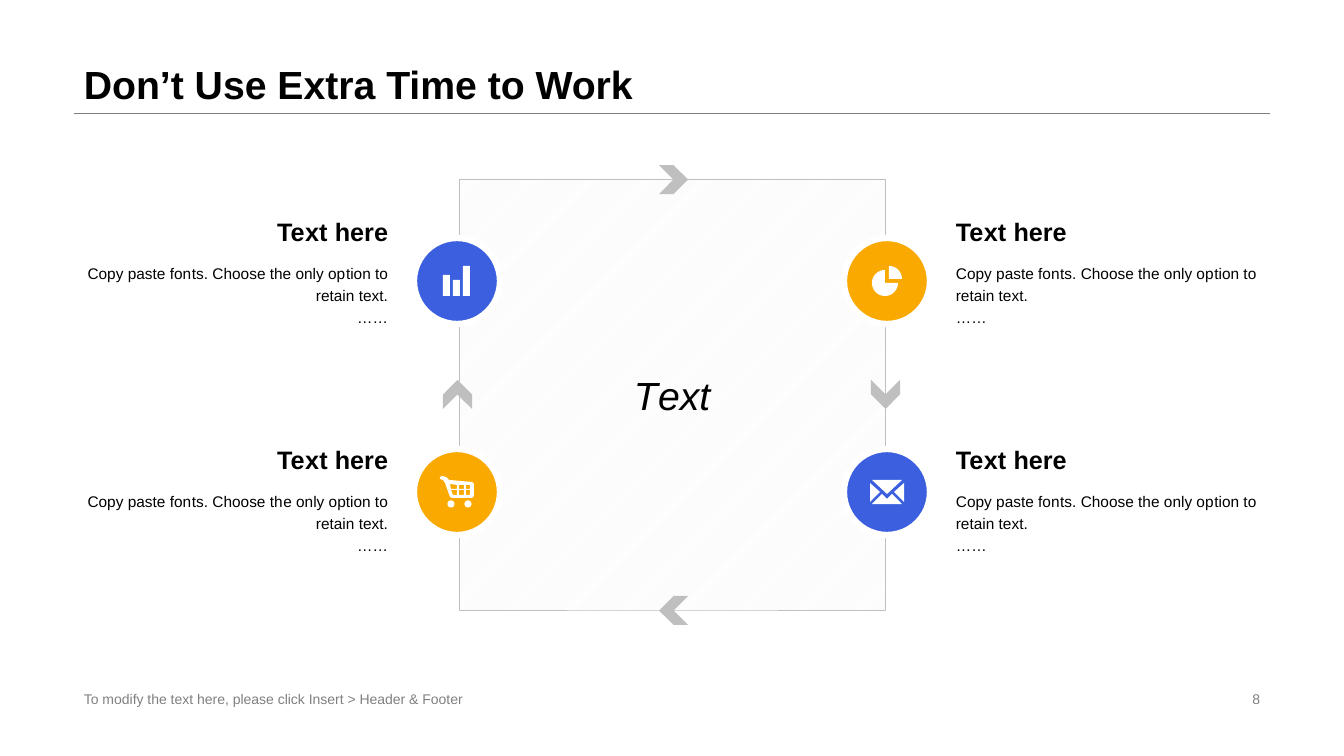
import math

import pptx
import pptx.dml.color
import pptx.enum.dml
import pptx.enum.shapes
import pptx.enum.text
import pptx.oxml.ns
import pptx.util
from lxml import etree

EMU_PER_PX = 914400 / 100.8
SHAPE = pptx.enum.shapes.MSO_SHAPE
ALIGN = pptx.enum.text.PP_ALIGN
ANCHOR = pptx.enum.text.MSO_ANCHOR

BLACK, WHITE, GRAY, SILVER = "000000", "FFFFFF", "808080", "BFBFBF"
BLUE, ORANGE = "3B5FDE", "FAA900"

# A bar in a text marks a hairline gap: a space of one point.
HAIRLINE = "|"
HEADING = "Te|xt |here"
BODY = "Copy paste fon|ts. Choose the only op|tion to retain text."
CART_HEADING = "Te|x|t here"
CART_BODY = "Copy paste fon|ts. Choose th|e only option to retain text."


def px(length):
    return pptx.util.Emu(round(length * EMU_PER_PX))


def set_color(target, value):
    target.rgb = pptx.dml.color.RGBColor.from_string(value)


def style_shape(shape, fill, line=None, width=0):
    shape.shadow.inherit = False
    shape.fill.solid()
    set_color(shape.fill.fore_color, fill)
    if line:
        set_color(shape.line.color, line)
        shape.line.width = pptx.util.Pt(width)
    else:
        shape.line.fill.background()


def add_span(para, text, size, color, bold, italic):
    span = para.add_run()
    span.text = text
    span.font.name = "Arial"
    span.font.size = pptx.util.Pt(size)
    span.font.bold = bold
    span.font.italic = italic
    set_color(span.font.color, color)


def write_text(shape, lines, size, color=BLACK, bold=False, italic=False,
               align=ALIGN.LEFT, anchor=ANCHOR.MIDDLE, spacing=1.0):
    """Fill a shape with one paragraph per line."""
    frame = shape.text_frame
    frame.word_wrap = True
    frame.vertical_anchor = anchor
    for index, line in enumerate(lines):
        para = frame.add_paragraph() if index else frame.paragraphs[0]
        para.alignment = align
        para.line_spacing = spacing
        for position, piece in enumerate(line.split(HAIRLINE)):
            if position:
                add_span(para, " ", 1, color, bold, italic)
            add_span(para, piece, size, color, bold, italic)


def add_text(page, bounds, lines, size, **style):
    box = page.shapes.add_textbox(*map(px, bounds))
    write_text(box, lines, size, **style)


def add_rule(page, left, right, y):
    rule = page.shapes.add_connector(
        pptx.enum.shapes.MSO_CONNECTOR.STRAIGHT, px(left), px(y), px(right), px(y))
    set_color(rule.line.color, GRAY)
    rule.line.width = pptx.util.Pt(0.25)
    properties = rule.element.find(pptx.oxml.ns.qn("p:spPr"))
    etree.SubElement(properties, pptx.oxml.ns.qn("a:effectLst"))


def add_square(page):
    square = page.shapes.add_shape(SHAPE.RECTANGLE, px(459), px(179), px(426), px(431))
    style_shape(square, WHITE, SILVER, 0.25)
    square.fill.patterned()
    square.fill.pattern = pptx.enum.dml.MSO_PATTERN.DARK_UPWARD_DIAGONAL
    set_color(square.fill.fore_color, "F2F2F2")
    set_color(square.fill.back_color, WHITE)
    write_text(square, ["T|ext"], 28, italic=True, align=ALIGN.CENTER)


def add_chevron(page, left, top, rotation):
    chevron = page.shapes.add_shape(SHAPE.CHEVRON, px(left), px(top), px(29), px(29))
    chevron.rotation = rotation
    style_shape(chevron, SILVER)


def arc(x, y, radius, start, sweep):
    """Points along an arc, in degrees clockwise from the right."""
    angles = [math.radians(start + sweep * step / 36) for step in range(37)]
    return [(x + radius * math.cos(a), y + radius * math.sin(a)) for a in angles]


def block(left, top, right, bottom):
    return [(left, top), (right, top), (right, bottom), (left, bottom)]


def add_icon(page, contours):
    """Draw closed contours as one white shape; inner contours become holes."""
    builder = None
    for contour in contours:
        first, *rest = [(px(x), px(y)) for x, y in contour]
        if builder is None:
            builder = page.shapes.build_freeform(*first)
        else:
            builder.move_to(*first)
        builder.add_line_segments(rest, close=True)
    style_shape(builder.convert_to_shape(), WHITE)


def bar_icon():
    return [block(left, top, left + 7, 296)
            for left, top in ((443, 275), (453, 280), (463, 266))]


def pie_icon():
    return [[(889, 279)] + arc(889, 279, 13, -90, 90),
            [(885, 283)] + arc(885, 283, 13, 0, 270)]


def envelope_icon():
    return [
        [(904, 483), (904, 502), (894, 492)],
        [(902, 480), (887, 494), (872, 480)],
        [(902, 504), (872, 504), (882, 494), (887, 499), (892, 494)],
        [(870, 483), (880, 492), (870, 502)],
    ]


def cart_icon():
    body = [(474, 484), (474, 496), (472, 498), (452, 498), (450, 497),
            (445, 483), (443, 480), (440, 479), (440, 477), (442, 476),
            (446, 477), (449, 480), (472, 482)]
    slanted = [[(450, 484), (457, 485), (457, 489), (451, 489)],
               [(451, 490), (457, 490), (457, 495), (453, 495)]]
    windows = [block(left, top, right, bottom)
               for left, right in ((459, 464), (466, 470))
               for top, bottom in ((485, 489), (490, 495))]
    wheels = [arc(x, 504, 7 / 2, 0, 360) for x in (451, 468)]
    return [body, *slanted, *windows, *wheels]


def add_item(page, column, row, color, icon, heading=HEADING, body=BODY):
    """Add one badge with its heading and body text."""
    badge = page.shapes.add_shape(
        SHAPE.OVAL, px((414, 844)[column]), px((238, 449)[row]), px(86), px(86))
    style_shape(badge, color, WHITE, 4.5)
    add_icon(page, icon)
    left, top = (74, 946)[column], 207 + 228 * row
    align = (ALIGN.RIGHT, ALIGN.LEFT)[column]
    add_text(page, (left, top + 48, 324, 100), [body, "……"], 11,
             align=align, anchor=ANCHOR.TOP, spacing=1.2)
    add_text(page, (left, top, 324, 48), [heading], 18, bold=True, align=align)


def main():
    deck = pptx.Presentation()
    deck.slide_width, deck.slide_height = px(1344), px(756)
    page = deck.slides.add_slide(deck.slide_layouts[6])

    add_rule(page, 74, 1270, 113)
    add_text(page, (74, 0, 1196, 113), ["Don’t Use Extra Time to Work"], 28,
             bold=True, anchor=ANCHOR.BOTTOM, spacing=0.9)
    add_text(page, (74, 687, 457, 23),
             ["To modify the text here, please click Insert > Header & Footer"],
             10, color=GRAY)
    add_text(page, (950, 687, 320, 23), ["8"], 10, color=GRAY, align=ALIGN.RIGHT)

    add_square(page)
    add_item(page, 1, 0, ORANGE, pie_icon())
    add_item(page, 0, 0, BLUE, bar_icon())
    add_item(page, 1, 1, BLUE, envelope_icon())
    add_item(page, 0, 1, ORANGE, cart_icon(), CART_HEADING, CART_BODY)
    for turn, (left, top) in enumerate(((659, 165), (871, 380), (659, 596), (443, 380))):
        add_chevron(page, left, top, 90 * turn)

    deck.save("out.pptx")


if __name__ == "__main__":
    main()
